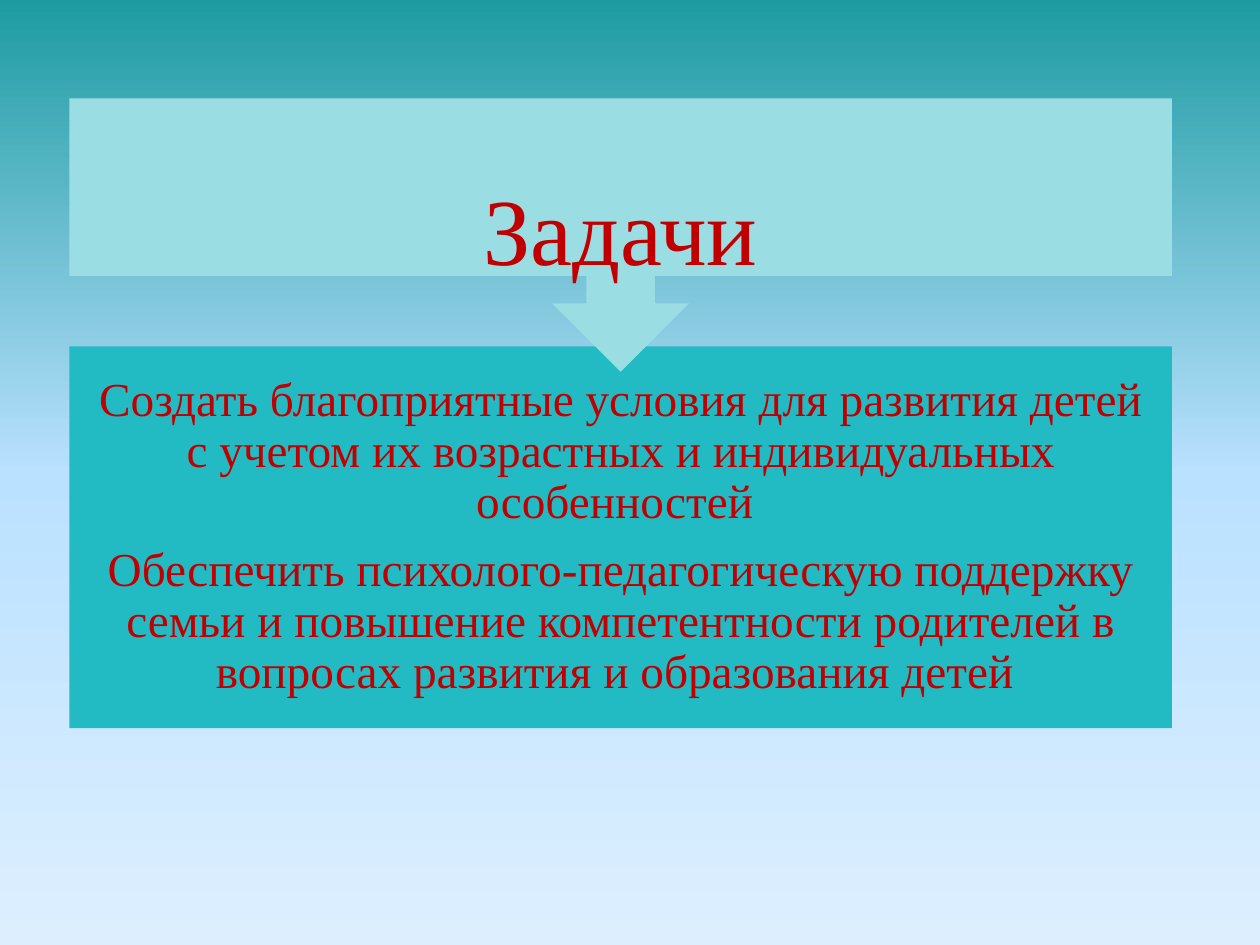
from copy import deepcopy
from dataclasses import dataclass

from pptx import Presentation
from pptx import util as u
from pptx.dml.color import RGBColor
from pptx.enum import shapes, text


@dataclass(frozen=True)
class Theme:
    font: str = "Times New Roman"
    ink: str = "C00000"
    header: str = "9ADEE4"
    panel: str = "23BBC3"
    sky: tuple = ((0, "1D9BA1"), (0.5, "BAE1FF"), (1, "DDEFFF"))
    title_size: int = 54
    body_size: int = 27


@dataclass(frozen=True)
class Block:
    """A filled shape and the text frame that shares its area."""
    top: float
    height: float
    preset: shapes.MSO_SHAPE
    fill: str
    rotation: int
    inset: float
    size: int
    lines: tuple


THEME = Theme()
LEFT, WIDTH = 0.55, 8.75

TASKS = Block(2.75, 3.03, shapes.MSO_SHAPE.RECTANGLE, THEME.panel, 0, 0.21, THEME.body_size, (
    "Создать благоприятные условия для развития детей с учетом их возрастных "
    "и индивидуальных особенностей ",
    "Обеспечить психолого-педагогическую поддержку семьи и повышение компетентности "
    "родителей в вопросах развития и образования детей ",
))
HEADER = Block(0.78, 2.17, shapes.MSO_SHAPE.UP_ARROW_CALLOUT, THEME.header, 180, 0.42,
               THEME.title_size, ("Задачи",))


def set_all(target, values: dict) -> None:
    for name, value in values.items():
        setattr(target, name, value)


def area(block: Block) -> dict:
    return dict(left=u.Inches(LEFT), top=u.Inches(block.top),
                width=u.Inches(WIDTH), height=u.Inches(block.height))


def paint_background(page) -> None:
    fill = page.background.fill
    fill.gradient()
    fill.gradient_angle = 270
    stop_list = page.element.xpath(".//a:gsLst")[0]
    while len(stop_list) < len(THEME.sky):
        stop_list.append(deepcopy(stop_list[0]))
    for stop, (position, color) in zip(fill.gradient_stops, THEME.sky):
        stop.position = position
        stop.color.rgb = RGBColor.from_string(color)


def draw_shape(page, block: Block) -> None:
    shape = page.shapes.add_shape(block.preset, **area(block))
    shape.rotation = block.rotation
    shape.shadow.inherit = False
    shape.fill.solid()
    shape.fill.fore_color.rgb = RGBColor.from_string(block.fill)
    shape.line.fill.background()


def write_text(box, block: Block) -> None:
    frame = box.text_frame
    sides = ("left", "top", "right", "bottom")
    set_all(frame, {f"margin_{side}": u.Inches(block.inset) for side in sides})
    set_all(frame, dict(word_wrap=True, auto_size=text.MSO_AUTO_SIZE.NONE,
                        vertical_anchor=text.MSO_ANCHOR.MIDDLE))
    for index, line in enumerate(block.lines):
        para = frame.add_paragraph() if index else frame.paragraphs[0]
        set_all(para, dict(alignment=text.PP_ALIGN.CENTER, line_spacing=0.9,
                           space_before=u.Pt(0), space_after=u.Pt(0.35 * block.size)))
        span = para.add_run()
        span.text = line
        set_all(span.font, dict(name=THEME.font, size=u.Pt(block.size)))
        span.font.color.rgb = RGBColor.from_string(THEME.ink)


def main() -> None:
    deck = Presentation()
    set_all(deck, dict(slide_width=u.Inches(10), slide_height=u.Inches(7.5)))
    page = deck.slides.add_slide(deck.slide_layouts[5])
    paint_background(page)

    # Task panel
    draw_shape(page, TASKS)
    write_text(page.shapes.add_textbox(**area(TASKS)), TASKS)

    # Header callout pointing at the panel, with the title in front
    draw_shape(page, HEADER)
    title = page.shapes.title
    set_all(title, area(HEADER))
    title.element.getparent().append(title.element)
    write_text(title, HEADER)

    deck.save("out.pptx")


if __name__ == "__main__":
    main()
